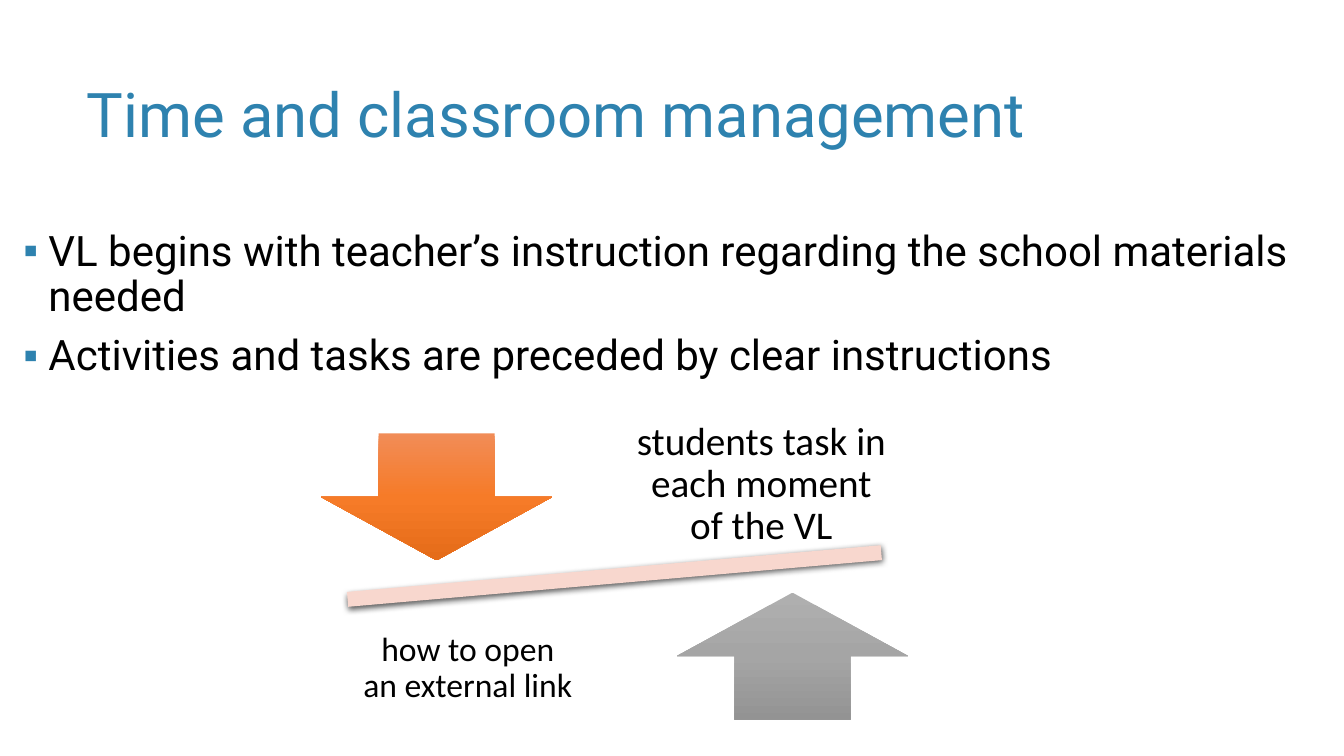
from lxml.etree import SubElement
from pptx import Presentation
from pptx.dml.color import RGBColor
from pptx.enum.shapes import MSO_SHAPE
from pptx.enum.text import MSO_ANCHOR, MSO_AUTO_SIZE, PP_ALIGN
from pptx.oxml.ns import qn
from pptx.util import Inches, Pt

WIDTH, HEIGHT = Inches(13.33), Inches(7.5)
BLUE = RGBColor(0x2E, 0x82, 0xAF)
BLACK = RGBColor(0, 0, 0)
PINK = RGBColor(0xF8, 0xD7, 0xCE)
ORANGES = (RGBColor(0xF1, 0x8C, 0x57), RGBColor(0xF6, 0x7B, 0x28), RGBColor(0xE5, 0x6C, 0x19))
GREYS = (RGBColor(0xAF, 0xAF, 0xAF), RGBColor(0xA5, 0xA5, 0xA5), RGBColor(0x93, 0x93, 0x93))
ARROW_SIZE = (17.25, 16.8)


def area(left, top, width, height):
    """Turn percentages of the slide into a position and size."""
    return tuple(int(share * side / 100)
                 for share, side in zip((left, top, width, height), (WIDTH, HEIGHT) * 2))


def apply(target, formats):
    """Set each named format value on the target."""
    for name, value in formats.items():
        setattr(target, name, value)


def place(sp, box):
    """Move and resize a shape to a box in slide percentages."""
    apply(sp, dict(zip(("left", "top", "width", "height"), area(*box))))


def write(p, text, font, size, color, **layout):
    """Write one formatted run and lay out its paragraph."""
    r = p.add_run()
    r.text = text
    apply(r.font, {"name": font, "size": Pt(size)})
    r.font.color.rgb = color
    apply(p, {"line_spacing": 0.9, "space_before": Pt(0), **layout})


def add_bullet(p):
    """Give a paragraph a hanging blue square bullet."""
    pPr = p._p.get_or_add_pPr()
    apply_xml = {"marL": Inches(0.25), "indent": Inches(-0.25)}
    for name, value in apply_xml.items():
        pPr.set(name, str(int(value)))
    SubElement(SubElement(pPr, qn("a:buClr")), qn("a:srgbClr"), val=str(BLUE))
    SubElement(pPr, qn("a:buFont"), typeface="Arial")
    SubElement(pPr, qn("a:buChar"), char="▪")


def fill_title(sp, text):
    """Place and format the slide title."""
    place(sp, (5.7, 5.87, 86.27, 19.33))
    apply(sp.text_frame, {"auto_size": MSO_AUTO_SIZE.NONE, "vertical_anchor": MSO_ANCHOR.MIDDLE})
    write(sp.text_frame.paragraphs[0], text, "Roboto", 44, BLUE, alignment=PP_ALIGN.LEFT)


def fill_body(sp, lines):
    """Place the body and write its bulleted lines."""
    place(sp, (0.98, 29.73, 95.72, 64.27))
    tf = sp.text_frame
    apply(tf, {"auto_size": MSO_AUTO_SIZE.NONE, "vertical_anchor": MSO_ANCHOR.TOP})
    for i, line in enumerate(lines):
        p = tf.add_paragraph() if i else tf.paragraphs[0]
        add_bullet(p)
        write(p, line, "Roboto", 30, BLACK, space_before=Pt(10 if i else 0))


def add_plain_shape(s, kind, box):
    """Add a preset shape with neither outline nor shadow."""
    sp = s.shapes.add_shape(kind, *area(*box))
    sp.shadow.inherit = False
    sp.line.fill.background()
    return sp


def add_arrow(s, kind, left, top, colors):
    """Add a block arrow shaded from top to bottom."""
    sp = add_plain_shape(s, kind, (left, top, *ARROW_SIZE))
    sp.fill.gradient()
    sp.fill.gradient_angle = 270
    stops = sp._element.spPr.find(f".//{qn('a:gsLst')}")
    for stop in list(stops):
        stops.remove(stop)
    for i, color in enumerate(colors):
        stop = SubElement(stops, qn("a:gs"), pos=str(i * 50000))
        SubElement(stop, qn("a:srgbClr"), val=str(color))


def add_beam(s, box):
    """Add the tilted balance beam with its soft shadow."""
    sp = add_plain_shape(s, MSO_SHAPE.MATH_MINUS, box)
    sp.rotation = 355
    sp.fill.solid()
    sp.fill.fore_color.rgb = PINK
    shadow = SubElement(sp._element.spPr.find(qn("a:effectLst")), qn("a:outerShdw"),
                        blurRad=str(Pt(4.5)), dist=str(Pt(1.5)), dir="5400000",
                        algn="ctr", rotWithShape="0")
    color = SubElement(shadow, qn("a:srgbClr"), val=str(BLACK))
    SubElement(color, qn("a:alpha"), val="63000")


def add_label(s, text, box, size, inset):
    """Add a centred, wrapping label."""
    tf = s.shapes.add_textbox(*area(*box)).text_frame
    apply(tf, {"word_wrap": True, "vertical_anchor": MSO_ANCHOR.MIDDLE})
    apply(tf, {f"margin_{side}": Inches(inset) for side in ("left", "top", "right", "bottom")})
    write(tf.paragraphs[0], text, "Calibri", size, BLACK, alignment=PP_ALIGN.CENTER)


def main():
    """Build and save the slide."""
    prs = Presentation()
    apply(prs, {"slide_width": WIDTH, "slide_height": HEIGHT})
    s = prs.slides.add_slide(prs.slide_layouts[1])
    fill_title(s.shapes.title, "Time and classroom management")
    fill_body(s.placeholders[1], (
        "VL begins with teacher’s instruction regarding the school materials needed",
        "Activities and tasks are preceded by clear instructions",
    ))
    add_beam(s, (18.6, 72, 54.24, 8.4))
    add_arrow(s, MSO_SHAPE.DOWN_ARROW, 23.86, 57.33, ORANGES)
    add_label(s, "students task in each moment of the VL", (45.54, 54, 22.21, 20.27), 28, 0.22)
    add_arrow(s, MSO_SHAPE.UP_ARROW, 50.34, 78.4, GREYS)
    add_label(s, "how to open an external link", (25.58, 79.6, 18.45, 17.6), 24, 0.19)
    prs.save("out.pptx")


if __name__ == "__main__":
    main()
